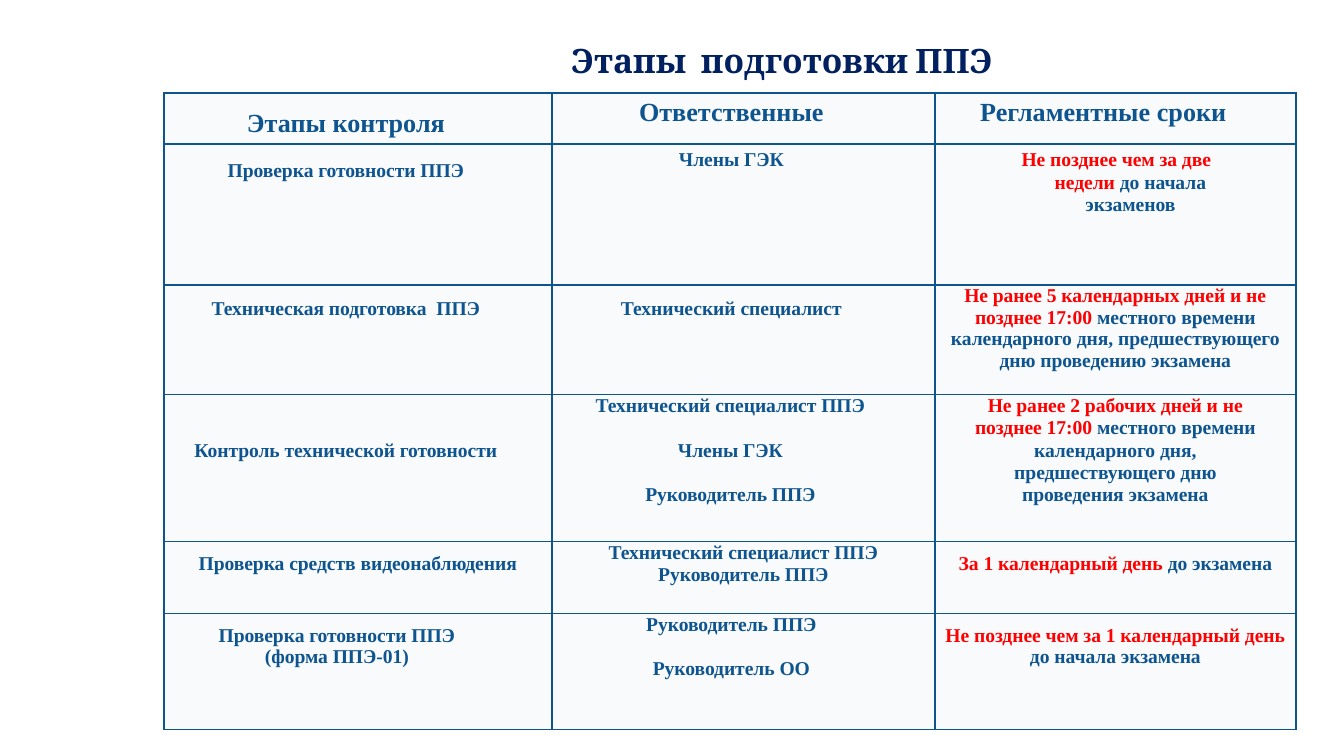
"""Build a slide with the table of exam site preparation stages."""
from dataclasses import dataclass

from lxml.etree import SubElement
from pptx import Presentation
from pptx.dml.color import RGBColor
from pptx.enum.text import MSO_ANCHOR, MSO_AUTO_SIZE, PP_ALIGN
from pptx.oxml.ns import qn
from pptx.slide import Slide
from pptx.table import _Cell
from pptx.text.text import _Paragraph
from pptx.util import Emu, Pt

SCALE = 9144000 / 1344


@dataclass(frozen=True)
class Theme:
    """Colours, fonts and type sizes."""
    navy: str = "002060"
    blue: str = "0E548F"
    red: str = "FF0000"
    pale: str = "DCE6F1"
    alpha: int = 18000
    serif: str = "Cambria"
    body: str = "Times New Roman"
    title: float = 18
    head: float = 14
    text: float = 10.5
    line: float = 0.75


@dataclass(frozen=True)
class Item:
    """Content of a cell: an alert in red, then text; lengths in px."""
    text: str
    alert: str = ""
    top: int = 0
    left: int = 0
    right: int = 0
    first: int = 0
    gap: float = 12.3
    lead: float = 1.0


THEME = Theme()
COLS = (388, 383, 361)
ROWS = (51, 141, 110, 147, 72, 116)
ITEMS = (
    (
        Item("Этапы контроля", top=16, right=24),
        Item("Ответственные", top=5, right=24),
        Item("Регламентные сроки", top=5, right=24),
    ),
    (
        Item("Проверка готовности ППЭ", top=16, right=24),
        Item("Члены ГЭК", top=5, right=24),
        Item("до начала экзаменов", "Не позднее чем за две недели ",
             top=5, left=93, right=63, first=-28, lead=1.02),
    ),
    (
        Item("Техническая подготовка  ППЭ", top=13, right=24),
        Item("Технический специалист", top=13, right=24),
        Item("местного времени календарного дня, предшествующего дню "
             "проведению экзамена",
             "Не ранее 5 календарных дней и не позднее 17:00 "),
    ),
    (
        Item("Контроль технической готовности", top=45, right=24),
        Item("Технический специалист ППЭ\nЧлены ГЭК\nРуководитель ППЭ",
             right=26),
        Item("местного времени календарного дня, предшествующего дню "
             "проведения экзамена",
             "Не ранее 2 рабочих дней и не позднее 17:00 ",
             left=40, right=40, lead=1.02),
    ),
    (
        Item("Проверка средств видеонаблюдения", top=11),
        Item("Технический специалист ППЭ Руководитель ППЭ"),
        Item("до экзамена", "За 1 календарный день ", top=11),
    ),
    (
        Item("Проверка готовности ППЭ\n(форма ППЭ-01)",
             top=11, right=42, gap=0),
        Item("Руководитель ППЭ\nРуководитель ОО", right=24),
        Item("до начала экзамена", "Не позднее чем за 1 календарный день ",
             top=11),
    ),
)


def px(num: float) -> Emu:
    """Turn px into EMU."""
    return Emu(round(num * SCALE))


def style(para: _Paragraph, name: str, size: float, tint: str) -> None:
    """Centre a paragraph and set its bold font."""
    para.alignment = PP_ALIGN.CENTER
    font = para.font
    font.name, font.size, font.bold = name, Pt(size), True
    font.color.rgb = RGBColor.from_string(tint)


def frame(cell: _Cell) -> None:
    """Give a cell its borders and its translucent fill."""
    props = cell._tc.get_or_add_tcPr()
    for side in ("a:lnL", "a:lnR", "a:lnT", "a:lnB"):
        edge = SubElement(props, qn(side), w=str(Pt(THEME.line)))
        fill = SubElement(edge, qn("a:solidFill"))
        SubElement(fill, qn("a:srgbClr"), val=THEME.blue)
    cell.fill.solid()
    cell.fill.fore_color.rgb = RGBColor.from_string(THEME.pale)
    tint = props.find(qn("a:solidFill")).find(qn("a:srgbClr"))
    SubElement(tint, qn("a:alpha"), val=str(THEME.alpha))


def write(cell: _Cell, item: Item, size: float) -> None:
    """Write an item into a cell."""
    cell.margin_left = cell.margin_right = cell.margin_bottom = 0
    cell.margin_top = px(item.top)
    cell.vertical_anchor = MSO_ANCHOR.TOP
    body = cell.text_frame
    for rank, line in enumerate(item.text.split("\n")):
        para = body.add_paragraph() if rank else body.paragraphs[0]
        props = para._p.get_or_add_pPr()
        props.set("marL", str(px(item.left)))
        props.set("marR", str(px(item.right)))
        props.set("indent", str(px(item.first)))
        para.line_spacing = item.lead
        if rank:
            para.space_before = Pt(item.gap)
        style(para, THEME.body, size, THEME.blue)
        if item.alert:
            run = para.add_run()
            run.text = item.alert
            run.font.color.rgb = RGBColor.from_string(THEME.red)
        para.add_run().text = line


def head(slide: Slide, text: str) -> None:
    """Place and format the title."""
    title = slide.shapes.title
    title.left, title.top = px(245), px(39)
    title.width, title.height = px(1074), px(43)
    body = title.text_frame
    body.text = text
    body.margin_left = body.margin_right = body.margin_bottom = 0
    body.margin_top = px(1)
    body.vertical_anchor = MSO_ANCHOR.TOP
    body.auto_size = MSO_AUTO_SIZE.NONE
    style(body.paragraphs[0], THEME.serif, THEME.title, THEME.navy)


def grid(slide: Slide) -> None:
    """Draw the table of stages."""
    table = slide.shapes.add_table(
        len(ROWS), len(COLS), px(164), px(93), px(sum(COLS)), px(sum(ROWS))
    ).table
    table.first_row = table.horz_banding = False
    for col, width in zip(table.columns, COLS):
        col.width = px(width)
    for rank, (row, high, items) in enumerate(zip(table.rows, ROWS, ITEMS)):
        row.height = px(high)
        for cell, item in zip(row.cells, items):
            frame(cell)
            write(cell, item, THEME.text if rank else THEME.head)


def main() -> None:
    """Build and save the deck."""
    deck = Presentation()
    deck.slide_width, deck.slide_height = px(1344), px(756)
    slide = deck.slides.add_slide(deck.slide_layouts[5])
    head(slide, "Этапы  подготовки ППЭ")
    grid(slide)
    deck.save("out.pptx")


if __name__ == "__main__":
    main()
